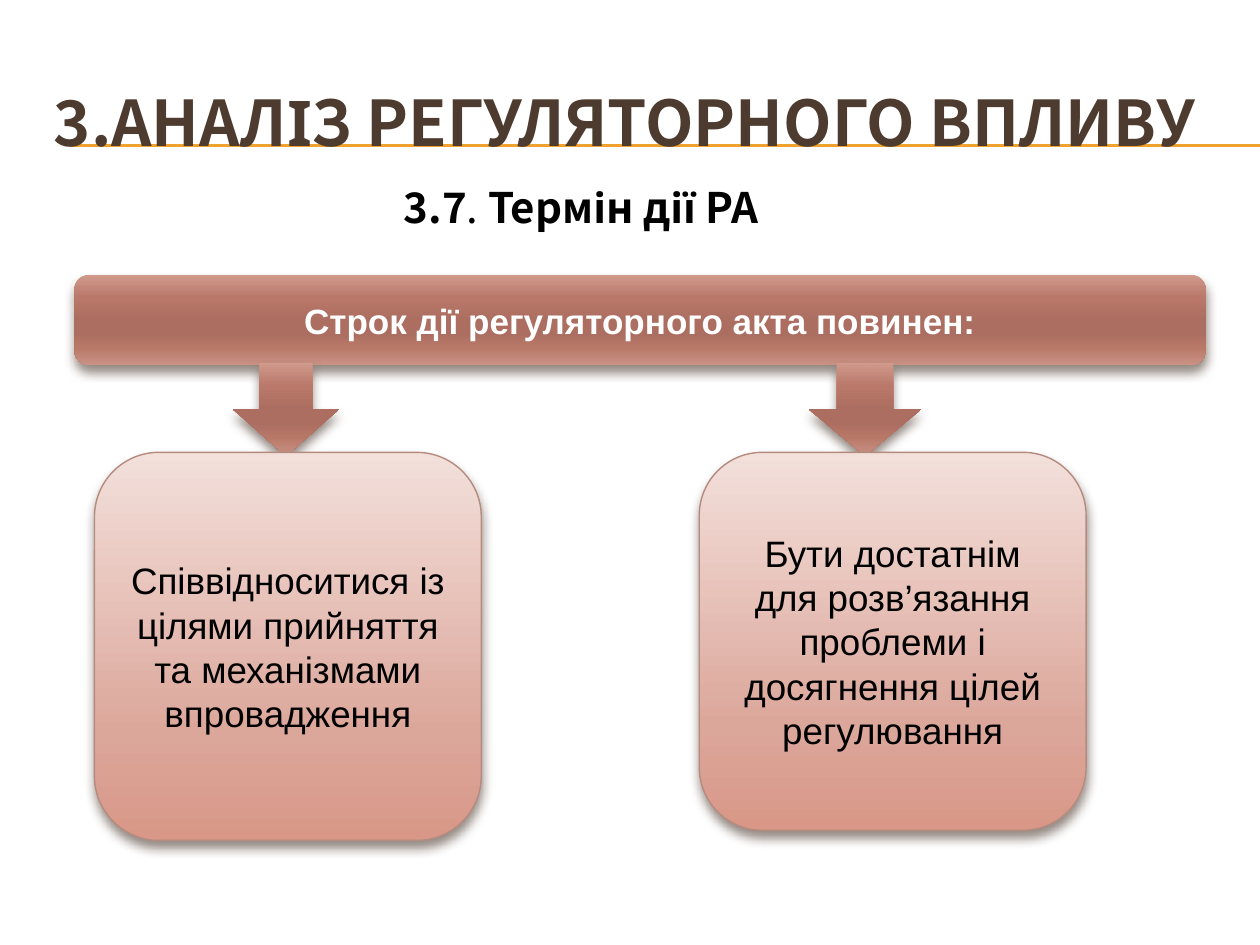
"""Build the slide on the term of validity of a regulatory act."""
from lxml import etree
from pptx import Presentation
from pptx.dml.color import RGBColor
from pptx.enum import shapes, text
from pptx.oxml import ns
from pptx.util import Inches, Pt

TITLE = [("3.АНАЛІЗ РЕГУЛЯТОРНОГО ВПЛИВУ", True)]
SUBTITLE = [("3.7", True), (". ", False), ("Термін дії РА", True)]
HEADING = [("Строк дії регуляторного акта повинен:", True)]
REQUIREMENTS = [
    {"words": "Співвідноситися із цілями прийняття та механізмами впровадження",
     "card": (0.75, 3.59, 3.07, 3.08), "arrow": (1.85, 2.88, 0.84, 0.74)},
    {"words": "Бути достатнім для розв’язання проблеми і досягнення цілей регулювання",
     "card": (5.55, 3.59, 3.07, 3), "arrow": (6.42, 2.88, 0.89, 0.74)},
]
DARK = [(0, "D09A8D"), (25, "B97869"), (50, "AB6E60"),
        (65, "AB6E60"), (80, "B87868"), (100, "CA9386")]
LIGHT = [(0, "F3E0DB"), (72, "DCA79B"), (100, "D89787")]
BROWN, GOLD, EDGE = "4E3B30", "F0A22E", "B58B80"
TITLE_FONT, BODY_FONT = "Noto Sans CJK KR", "Arial"
PANEL = shapes.MSO_SHAPE.FLOWCHART_ALTERNATE_PROCESS
ARROW = shapes.MSO_SHAPE.DOWN_ARROW


def color(value):
    return RGBColor.from_string(value)


def add_xml(parent, tag, **attributes):
    return etree.SubElement(parent, ns.qn(tag), {k: str(v) for k, v in attributes.items()})


def write(holder, runs, size, font, ink, align=text.PP_ALIGN.CENTER,
          anchor=text.MSO_ANCHOR.MIDDLE):
    frame = holder.text_frame
    frame.word_wrap = True
    frame.vertical_anchor = anchor
    paragraph = frame.paragraphs[0]
    paragraph.alignment = align
    for words, bold in runs:
        run = paragraph.add_run()
        run.text = words
        for name, value in {"size": Pt(size), "name": font, "bold": bold}.items():
            setattr(run.font, name, value)
        run.font.color.rgb = color(ink)


def add_block(slide, kind, box, stops, edge=None):
    block = slide.shapes.add_shape(kind, *map(Inches, box))
    block.fill.gradient()
    block.fill.gradient_angle = 270
    stop_list = block.element.spPr.find(".//" + ns.qn("a:gsLst"))
    for old in list(stop_list):
        stop_list.remove(old)
    for position, value in stops:
        stop = add_xml(stop_list, "a:gs", pos=position * 1000)
        add_xml(stop, "a:srgbClr", val=value)
    if edge:
        block.line.color.rgb = color(edge)
        block.line.width = Pt(0.79)
    else:
        block.line.fill.background()
    block.shadow.inherit = False
    effects = block.element.spPr.find(ns.qn("a:effectLst"))
    shadow = add_xml(effects, "a:outerShdw", blurRad=Pt(6), dist=Pt(4),
                     dir=5400000, rotWithShape=0)
    add_xml(add_xml(shadow, "a:srgbClr", val=BROWN), "a:alpha", val=60000)
    return block


def main():
    deck = Presentation()
    deck.slide_width, deck.slide_height = Inches(10), Inches(7.5)
    slide = deck.slides.add_slide(deck.slide_layouts[6])

    for y in (1.15, 1.16):
        rule = slide.shapes.add_connector(
            shapes.MSO_CONNECTOR.STRAIGHT, *map(Inches, (0.56, y, 10, y)))
        rule.line.color.rgb = color(GOLD)
        rule.line.width = Pt(0.75)
        add_xml(rule.element.spPr, "a:effectLst")

    title = slide.shapes.add_textbox(*map(Inches, (0.33, 0.5, 9.5, 0.92)))
    write(title, TITLE, 36, TITLE_FONT, BROWN, text.PP_ALIGN.LEFT)
    subtitle = slide.shapes.add_textbox(*map(Inches, (0.75, 1.39, 7.72, 0.5)))
    write(subtitle, SUBTITLE, 24, TITLE_FONT, "000000", anchor=text.MSO_ANCHOR.TOP)

    heading = add_block(slide, PANEL, (0.59, 2.18, 8.98, 0.72), DARK)
    write(heading, HEADING, 20, BODY_FONT, "FFFFFF")
    for requirement in REQUIREMENTS:
        add_block(slide, ARROW, requirement["arrow"], DARK)
        card = add_block(slide, PANEL, requirement["card"], LIGHT, EDGE)
        write(card, [(requirement["words"], False)], 21, BODY_FONT, "000000")

    deck.save("out.pptx")


if __name__ == "__main__":
    main()
